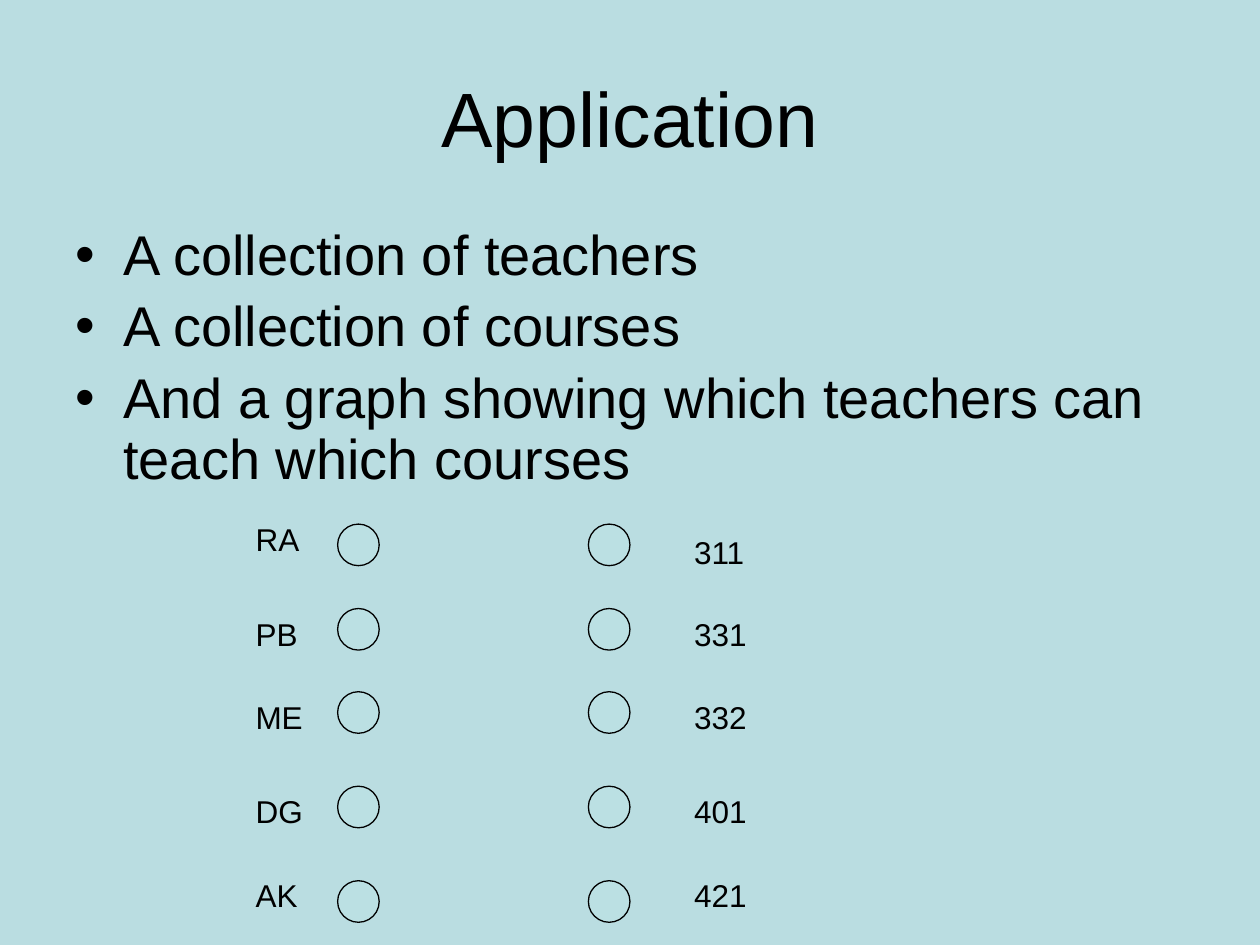
from dataclasses import dataclass

from lxml.etree import SubElement
from pptx import Presentation
from pptx.dml.color import RGBColor
from pptx.enum.shapes import MSO_SHAPE
from pptx.enum.text import MSO_ANCHOR, MSO_AUTO_SIZE, PP_ALIGN
from pptx.oxml.ns import qn
from pptx.util import Inches, Pt


@dataclass(frozen=True)
class Theme:
    font: str = "Arial"
    background: RGBColor = RGBColor(0xBA, 0xDD, 0xE1)
    node: RGBColor = RGBColor(0xBB, 0xE0, 0xE3)
    ink: RGBColor = RGBColor(0, 0, 0)
    title_size: int = 44
    body_size: int = 32
    label_size: int = 18
    outline: float = 0.75


THEME = Theme()

BULLETS = (
    "A collection of teachers",
    "A collection of courses",
    "And a graph showing which teachers can teach which courses",
)
TEACHERS = ("RA", "PB", "ME", "DG", "AK")
COURSES = ("311", "331", "332", "401", "421")

# Vertical offsets from the top of the graph
NODE_TOPS = (0.08, 0.75, 1.41, 2.16, 2.91)
TEACHER_TOPS = (0, 0.75, 1.41, 2.16, 2.82)
COURSE_TOPS = (0.1, 0.75, 1.41, 2.16, 2.82)
NODE_SIZE = 0.33


def add_frame(slide, left, top, width, height):
    frame = slide.shapes.add_textbox(
        Inches(left), Inches(top), Inches(width), Inches(height)
    ).text_frame
    frame.word_wrap = True
    return frame


def add_text(paragraph, text, size):
    run = paragraph.add_run()
    run.text = text
    run.font.name = THEME.font
    run.font.size = Pt(size)
    run.font.color.rgb = THEME.ink


def set_space_before(paragraph, percent):
    """Set the space before as a share of the text size."""
    paragraph.space_before = Pt(0)
    spacing = paragraph._p.pPr.find(qn("a:spcBef"))
    spacing.remove(spacing[0])
    SubElement(spacing, qn("a:spcPct"), val=str(percent * 1000))


def add_bullet(paragraph):
    properties = paragraph._p.get_or_add_pPr()
    properties.set("marL", str(Inches(0.38)))
    properties.set("indent", str(Inches(-0.38)))
    SubElement(properties, qn("a:buFont"), typeface=THEME.font)
    SubElement(properties, qn("a:buChar"), char="•")


def add_title(slide, left, top, width, height):
    frame = add_frame(slide, left, top, width, height)
    frame.vertical_anchor = MSO_ANCHOR.MIDDLE
    title = frame.paragraphs[0]
    title.alignment = PP_ALIGN.CENTER
    add_text(title, "Application", THEME.title_size)


def add_bullets(slide, left, top, width, height):
    frame = add_frame(slide, left, top, width, height)
    for index, text in enumerate(BULLETS):
        paragraph = frame.add_paragraph() if index else frame.paragraphs[0]
        paragraph.line_spacing = 0.9
        set_space_before(paragraph, 20)
        add_bullet(paragraph)
        add_text(paragraph, text, THEME.body_size)


def add_nodes(slide, left, top):
    for offset in NODE_TOPS:
        node = slide.shapes.add_shape(
            MSO_SHAPE.OVAL, Inches(left), Inches(top + offset),
            Inches(NODE_SIZE), Inches(NODE_SIZE),
        )
        node.shadow.inherit = False
        node.fill.solid()
        node.fill.fore_color.rgb = THEME.node
        node.line.color.rgb = THEME.ink
        node.line.width = Pt(THEME.outline)


def add_labels(slide, left, top, width, labels, offsets):
    for label, offset in zip(labels, offsets):
        frame = add_frame(slide, left, top + offset, width, 0.4)
        frame.auto_size = MSO_AUTO_SIZE.SHAPE_TO_FIT_TEXT
        paragraph = frame.paragraphs[0]
        set_space_before(paragraph, 50)
        add_text(paragraph, label, THEME.label_size)


def add_graph(slide, left, top):
    """Place the teacher nodes facing the course nodes, with outer labels."""
    add_nodes(slide, left + 0.75, top)
    add_nodes(slide, left + 2.74, top)
    add_labels(slide, left, top, 0.75, TEACHERS, TEACHER_TOPS)
    add_labels(slide, left + 3.48, top, 0.91, COURSES, COURSE_TOPS)


def main():
    deck = Presentation()
    deck.slide_width, deck.slide_height = Inches(10), Inches(7.5)
    slide = deck.slides.add_slide(deck.slide_layouts[6])
    slide.background.fill.solid()
    slide.background.fill.fore_color.rgb = THEME.background
    add_title(slide, 0.5, 0.3, 9, 1.25)
    add_bullets(slide, 0.5, 1.75, 9, 2.25)
    add_graph(slide, 1.93, 4.08)
    deck.save("out.pptx")


if __name__ == "__main__":
    main()
